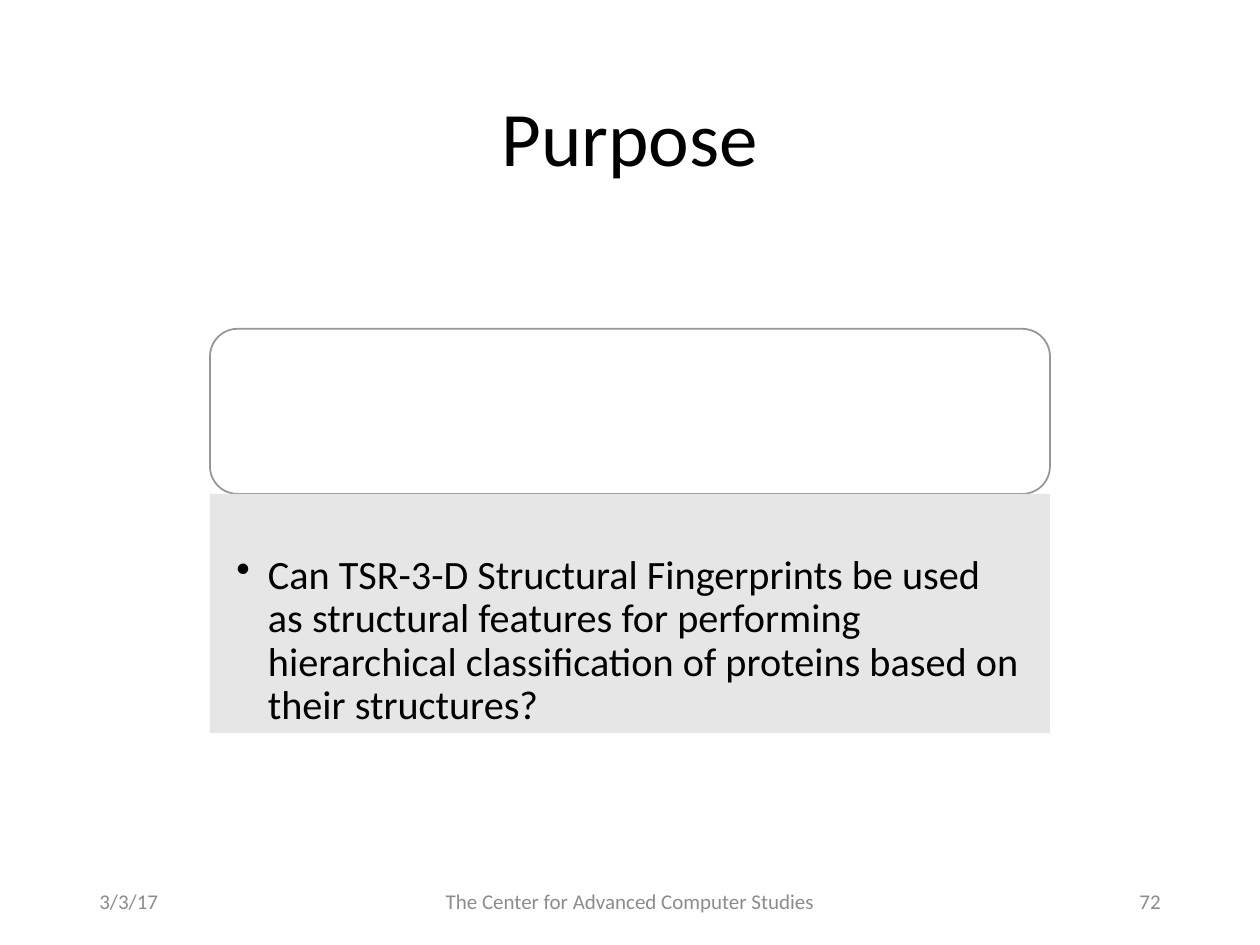
"""Build the Purpose slide: a title, a two-part panel with one question, and a footer."""
import pptx
import pptx.dml.color
import pptx.enum.shapes
import pptx.enum.text
import pptx.util
from lxml import etree

SHAPE = pptx.enum.shapes.MSO_SHAPE
ALIGN = pptx.enum.text.PP_ALIGN
ANCHOR = pptx.enum.text.MSO_ANCHOR
Inches = pptx.util.Inches


def color(fmt, value):
    fmt.rgb = pptx.dml.color.RGBColor.from_string(value)


def write(sp, text, size, value, align):
    tf = sp.text_frame
    tf.word_wrap = True
    tf.vertical_anchor = ANCHOR.MIDDLE
    p = tf.paragraphs[0]
    p.text = text
    p.alignment = align
    r = p.runs[0]
    r.font.name = "Calibri"
    r.font.size = pptx.util.Pt(size)
    color(r.font.color, value)
    return p


prs = pptx.Presentation()
prs.slide_width, prs.slide_height = Inches(10), Inches(7.5)
s = prs.slides.add_slide(prs.slide_layouts[6])
W, H = prs.slide_width, prs.slide_height
margin = Inches(0.69)

sp = s.shapes.add_textbox(margin, Inches(0.4), W - 2 * margin, Inches(1.45))
write(sp, "Purpose", 44, "000000", ALIGN.CENTER).line_spacing = 0.9

left, width = W // 6, W * 2 // 3
top, head, body = Inches(2.61), Inches(1.31), Inches(1.9)
panels = []
for kind, y, height, fill in [
    (SHAPE.ROUNDED_RECTANGLE, top, head, "FFFFFF"),
    (SHAPE.RECTANGLE, top + head, body, "E7E6E6"),
]:
    sp = s.shapes.add_shape(kind, left, y, width, height)
    sp.shadow.inherit = False
    sp.fill.solid()
    color(sp.fill.fore_color, fill)
    panels.append(sp)
header, question = panels
color(header.line.color, "969696")
header.line.width = pptx.util.Pt(1)
question.line.fill.background()

p = write(
    question,
    "Can TSR-3-D Structural Fingerprints be used as structural features for "
    "performing hierarchical classification of proteins based on their structures?",
    23, "000000", ALIGN.LEFT,
)
p.line_spacing = 0.9
pPr = p._p.get_or_add_pPr()
pPr.set("marL", str(Inches(0.25)))
pPr.set("indent", str(-Inches(0.25)))
bullet = etree.SubElement(pPr, pptx.oxml.ns.qn("a:buChar"))
bullet.set("char", "•")
tf = question.text_frame
tf.vertical_anchor = ANCHOR.TOP
tf.margin_left, tf.margin_right = Inches(0.21), Inches(0.23)
tf.margin_top, tf.margin_bottom = Inches(0.48), Inches(0.04)

side, middle = Inches(2.25), Inches(3.38)
for text, x, width, align in [
    ("3/3/17", margin, side, ALIGN.LEFT),
    ("The Center for Advanced Computer Studies", (W - middle) // 2, middle, ALIGN.CENTER),
    ("72", W - margin - side, side, ALIGN.RIGHT),
]:
    sp = s.shapes.add_textbox(x, Inches(6.95), width, Inches(0.4))
    write(sp, text, 12, "8C8C8C", align)

prs.save("out.pptx")
